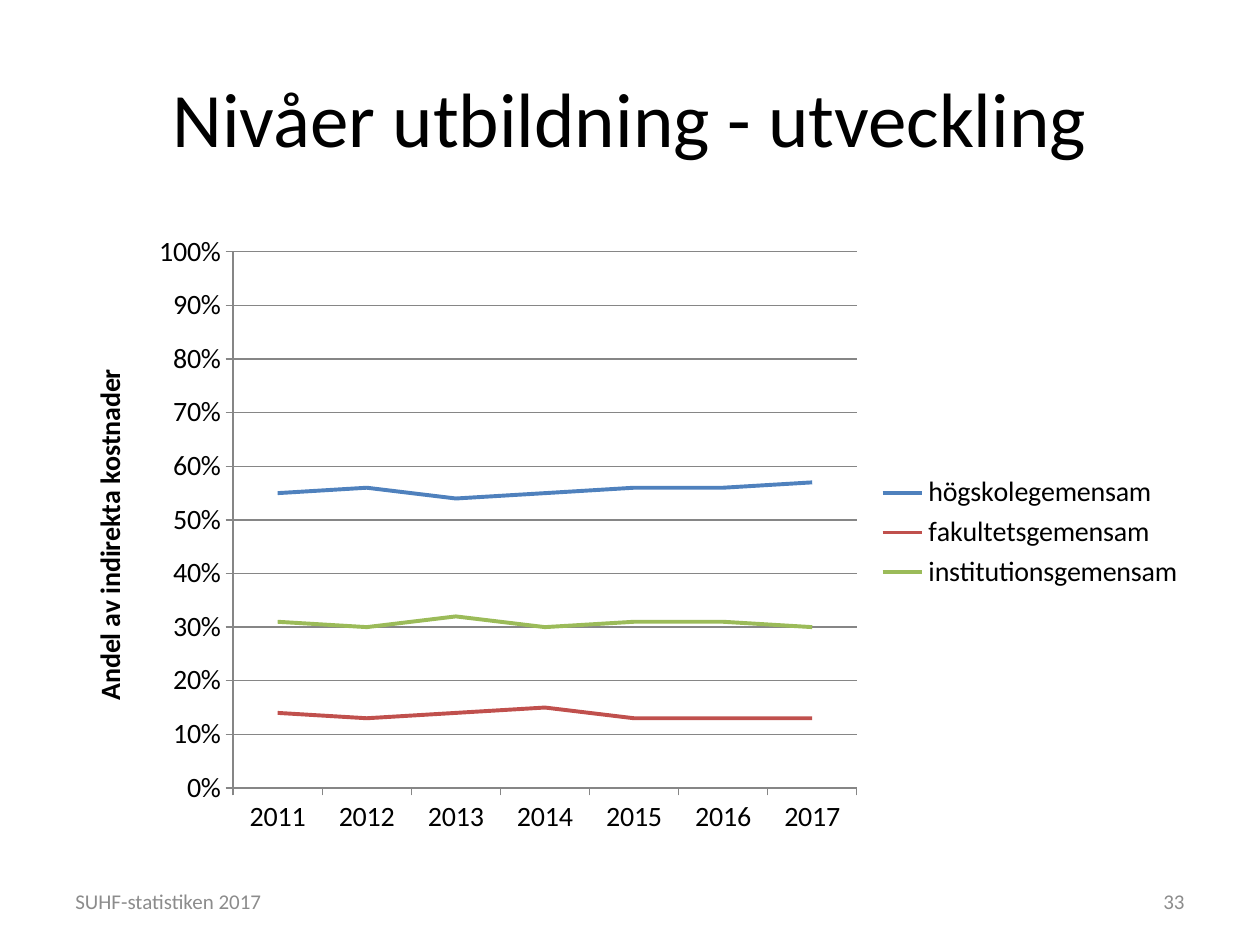
from lxml.etree import SubElement as Sub
from pptx import Presentation
from pptx.chart.data import CategoryChartData as Data
from pptx.dml.color import RGBColor as Rgb
from pptx.enum.chart import XL_CHART_TYPE as Kind, XL_LEGEND_POSITION as Side
from pptx.enum.chart import XL_MARKER_STYLE as Mark, XL_TICK_MARK as Tick
from pptx.enum.text import MSO_ANCHOR as Anchor, PP_ALIGN as Align
from pptx.oxml.ns import qn
from pptx.util import Cm, Pt

# Content
YEARS = [str(y) for y in range(2011, 2018)]
SERIES = {
    "högskolegemensam": (0.55, 0.56, 0.54, 0.55, 0.56, 0.56, 0.57),
    "fakultetsgemensam": (0.14, 0.13, 0.14, 0.15, 0.13, 0.13, 0.13),
    "institutionsgemensam": (0.31, 0.30, 0.32, 0.30, 0.31, 0.31, 0.30),
}
AXIS = "Andel av indirekta kostnader"
THEME = {
    "font": "Calibri", "ink": "000000", "grey": "8C8C8C", "rule": "868686",
    "lines": ("4F81BD", "C0504D", "9BBB59"),
    "head": 44, "body": 16, "foot": 12,
}
PAGE = (25.4, 19.05)
EDGE = 1.27
WIDE = PAGE[0] - 2 * EDGE
NUM = 5.93
# text, left, top, width, height, align, size, colour
TEXTS = [
    ("Nivåer utbildning - utveckling", EDGE, 0.76, WIDE, 3.18,
     Align.CENTER, "head", "ink"),
    ("SUHF-statistiken 2017", EDGE, 17.65, 10.64, 1.02, Align.LEFT, "foot", "grey"),
    ("33", PAGE[0] - EDGE - NUM, 17.65, NUM, 1.02, Align.RIGHT, "foot", "grey"),
]
CHART = (EDGE, 4.45, WIDE, 12.57)
PLOT = {"x": 0.15, "y": 0.05, "w": 0.55, "h": 0.86}


def put(obj, vals):
    for key, val in vals.items():
        setattr(obj, key, val)


def style(font, size, tint, bold=False):
    put(font, {"name": THEME["font"], "size": Pt(THEME[size]), "bold": bold})
    font.color.rgb = Rgb.from_string(THEME[tint])


def stroke(line, tint, width):
    line.width = Pt(width)
    line.color.rgb = Rgb.from_string(tint)


def add_text(slide, text, x, y, w, h, align, size, tint):
    frame = slide.shapes.add_textbox(Cm(x), Cm(y), Cm(w), Cm(h)).text_frame
    put(frame, {"word_wrap": True, "vertical_anchor": Anchor.MIDDLE})
    para = frame.paragraphs[0]
    para.alignment = align
    run = para.add_run()
    run.text = text
    style(run.font, size, tint)


def set_plot(chart):
    area = chart._chartSpace.chart.plotArea
    for old in area.findall(qn("c:layout")):
        area.remove(old)
    lay = Sub(area, qn("c:layout"))
    area.insert(0, lay)
    man = Sub(lay, qn("c:manualLayout"))
    marks = {"layoutTarget": "inner", "xMode": "edge", "yMode": "edge"}
    for tag, val in {**marks, **PLOT}.items():
        Sub(man, qn("c:" + tag)).set("val", str(val))


def add_graph(slide):
    data = Data(number_format="0%")
    data.categories = YEARS
    for name, vals in SERIES.items():
        data.add_series(name, vals)
    box = [Cm(n) for n in CHART]
    chart = slide.shapes.add_chart(Kind.LINE, *box, data).chart
    put(chart, {"has_title": False, "has_legend": True})
    style(chart.font, "body", "ink")
    put(chart.legend, {"position": Side.RIGHT, "include_in_layout": False})
    chart.plots[0].vary_by_categories = False
    for ser, tint in zip(chart.plots[0].series, THEME["lines"]):
        ser.smooth = False
        ser.marker.style = Mark.NONE
        stroke(ser.format.line, tint, 2.25)

    # Axes and grid
    cat, val = chart.category_axis, chart.value_axis
    for axis in (cat, val):
        put(axis, {"major_tick_mark": Tick.OUTSIDE, "minor_tick_mark": Tick.NONE})
        stroke(axis.format.line, THEME["rule"], 0.75)
    cat.has_major_gridlines = False
    put(val, {"minimum_scale": 0, "maximum_scale": 1, "major_unit": 0.1,
              "has_major_gridlines": True, "has_title": True})
    stroke(val.major_gridlines.format.line, THEME["rule"], 0.75)
    put(val.tick_labels, {"number_format": "0%", "number_format_is_linked": False})
    frame = val.axis_title.text_frame
    frame.text = AXIS
    style(frame.paragraphs[0].runs[0].font, "body", "ink", True)
    set_plot(chart)


def main():
    deck = Presentation()
    put(deck, {"slide_width": Cm(PAGE[0]), "slide_height": Cm(PAGE[1])})
    slide = deck.slides.add_slide(deck.slide_layouts[6])
    add_graph(slide)
    for item in TEXTS:
        add_text(slide, *item)
    deck.save("out.pptx")


if __name__ == "__main__":
    main()
